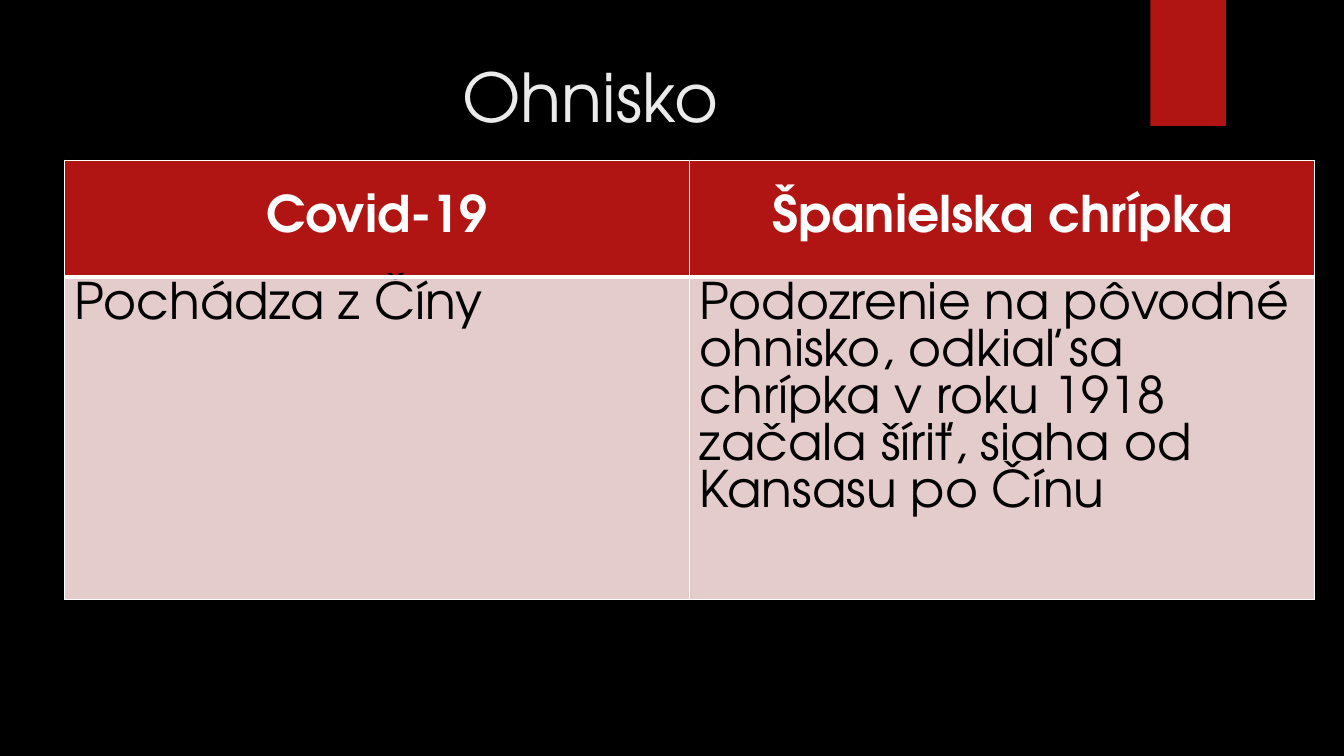
from dataclasses import dataclass

from lxml import etree
from pptx import Presentation
from pptx.dml.color import RGBColor
from pptx.enum import shapes, text
from pptx.oxml import ns
from pptx.util import Inches, Pt

FONT = "TeX Gyre Adventor"
BLACK = RGBColor(0x00, 0x00, 0x00)
WHITE = RGBColor(0xFF, 0xFF, 0xFF)
TITLE_GREY = RGBColor(0xEB, 0xEB, 0xEB)
RED = RGBColor(0xB0, 0x15, 0x13)
PINK = RGBColor(0xE4, 0xCC, 0xCC)


@dataclass(frozen=True)
class RowStyle:
    height: float
    fill: RGBColor
    color: RGBColor
    bold: bool
    align: text.PP_ALIGN
    anchor: text.MSO_ANCHOR
    top_border: int
    bottom_border: int


HEADER = RowStyle(1.16, RED, WHITE, True, text.PP_ALIGN.CENTER,
                  text.MSO_ANCHOR.MIDDLE, 1, 3)
BODY = RowStyle(3.2, PINK, BLACK, False, text.PP_ALIGN.LEFT,
                text.MSO_ANCHOR.TOP, 3, 1)
COMPARISON = [
    (HEADER, ("Covid-19", "Španielska chrípka")),
    (BODY, ("Pochádza z Číny",
            "Podozrenie na pôvodné ohnisko, odkiaľ sa chrípka v roku 1918 "
            "začala šíriť, siaha od Kansasu po Čínu")),
]


def format_paragraph(paragraph, size: int, color: RGBColor, bold: bool,
                     align: text.PP_ALIGN) -> None:
    paragraph.alignment = align
    paragraph.font.name = FONT
    paragraph.font.size = Pt(size)
    paragraph.font.bold = bold
    paragraph.font.color.rgb = color


def add_borders(cell, style: RowStyle) -> None:
    """Draw white cell borders; they must precede the fill in the XML."""
    properties = cell._tc.get_or_add_tcPr()
    widths = {"lnL": 1, "lnR": 1, "lnT": style.top_border,
              "lnB": style.bottom_border}
    for position, (side, width) in enumerate(widths.items()):
        line = etree.Element(ns.qn(f"a:{side}"), w=str(Pt(width)))
        fill = etree.SubElement(line, ns.qn("a:solidFill"))
        etree.SubElement(fill, ns.qn("a:srgbClr"), val=str(WHITE))
        properties.insert(position, line)


def fill_cell(cell, wording: str, style: RowStyle) -> None:
    cell.text = wording
    cell.vertical_anchor = style.anchor
    cell.fill.solid()
    cell.fill.fore_color.rgb = style.fill
    add_borders(cell, style)
    format_paragraph(cell.text_frame.paragraphs[0], 36, style.color,
                     style.bold, style.align)


def add_ribbon(slide) -> None:
    ribbon = slide.shapes.add_shape(
        shapes.MSO_SHAPE.RECTANGLE,
        Inches(11.41), Inches(0), Inches(0.75), Inches(1.25))
    ribbon.shadow.inherit = False
    ribbon.fill.solid()
    ribbon.fill.fore_color.rgb = RED
    ribbon.line.fill.background()


def add_title(slide) -> None:
    heading = slide.shapes.title
    heading.left, heading.top = Inches(0.71), Inches(0.5)
    heading.width, heading.height = Inches(10.29), Inches(1.53)
    frame = heading.text_frame
    frame.text = "Ohnisko"
    frame.vertical_anchor = text.MSO_ANCHOR.TOP
    format_paragraph(frame.paragraphs[0], 48, TITLE_GREY, False,
                     text.PP_ALIGN.CENTER)


def add_comparison(slide) -> None:
    table = slide.shapes.add_table(
        len(COMPARISON), 2,
        Inches(0.64), Inches(1.59), Inches(12.4), Inches(4.36)).table
    for row, (style, wordings) in zip(table.rows, COMPARISON):
        row.height = Inches(style.height)
        for cell, wording in zip(row.cells, wordings):
            fill_cell(cell, wording, style)


def main() -> None:
    deck = Presentation()
    deck.slide_width, deck.slide_height = Inches(13.33), Inches(7.5)
    slide = deck.slides.add_slide(deck.slide_layouts[5])
    slide.background.fill.solid()
    slide.background.fill.fore_color.rgb = BLACK
    add_ribbon(slide)
    add_title(slide)
    add_comparison(slide)
    deck.save("out.pptx")


if __name__ == "__main__":
    main()
